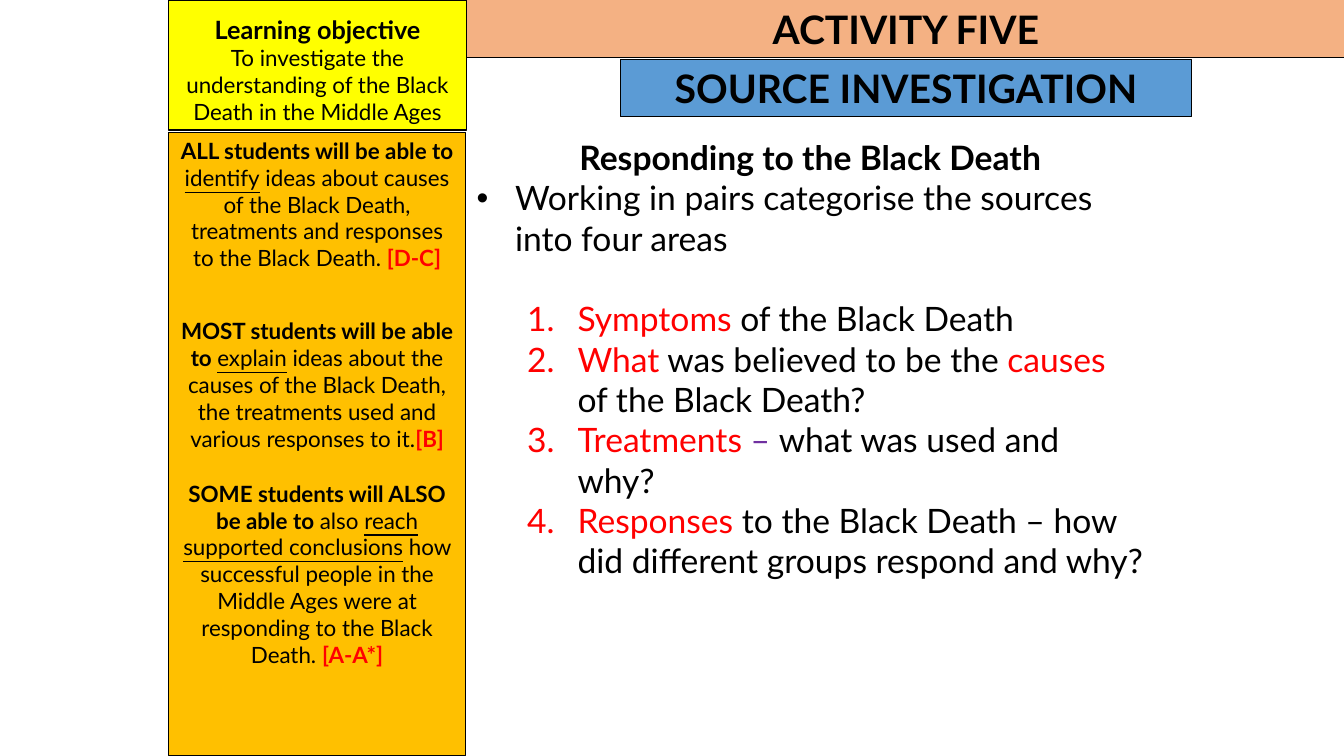
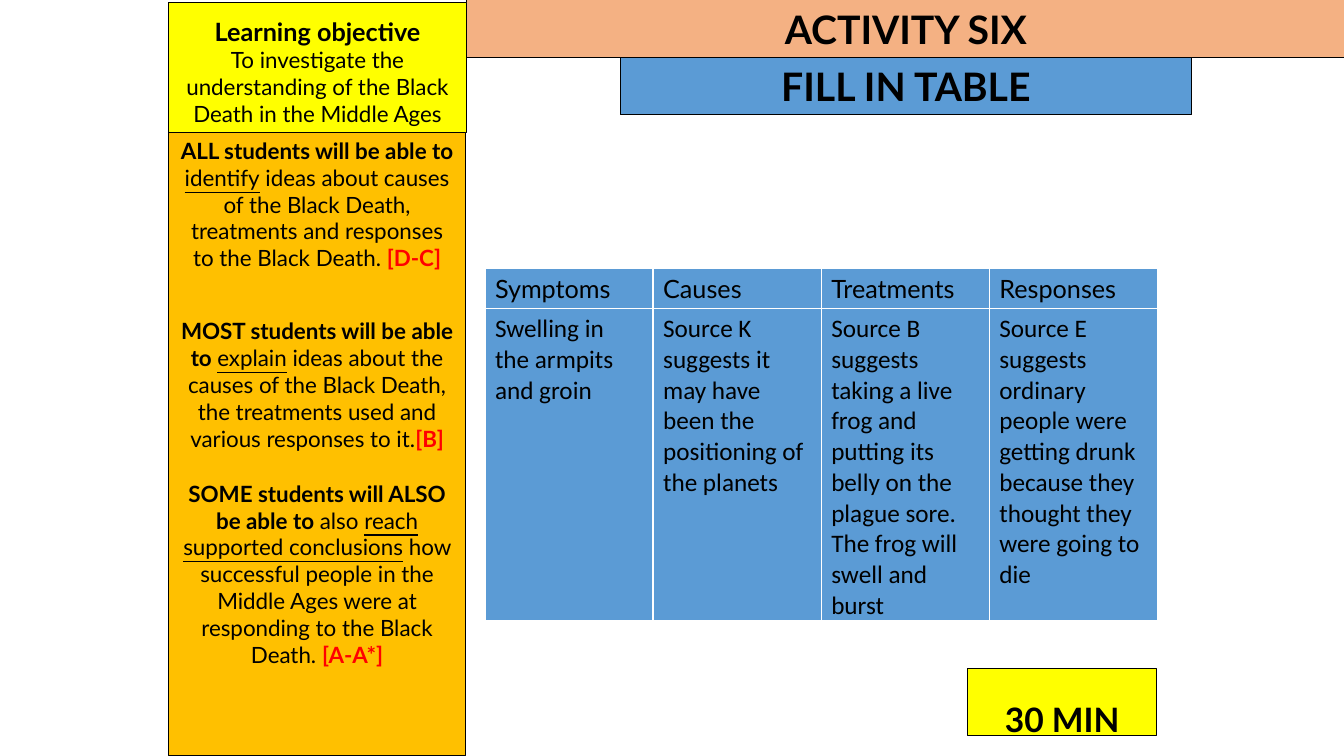
"""Build two lesson slides about the Black Death with a shared objectives sidebar."""
import lxml.etree
import pptx
import pptx.dml.color
import pptx.enum.shapes
import pptx.enum.text
import pptx.oxml.ns
import pptx.util

Inches = pptx.util.Inches
Pt = pptx.util.Pt
ANCHOR = pptx.enum.text.MSO_ANCHOR
ALIGN = pptx.enum.text.PP_ALIGN

FONT = "Lato"
BLACK, WHITE, RED, PURPLE = "000000", "FFFFFF", "FF0000", "7030A0"
YELLOW, AMBER, PEACH, BLUE = "FFFF00", "FFC000", "F4B183", "5B9BD5"
MARK_COLORS = {"r": RED, "p": PURPLE}

SIDEBAR_LEFT, SIDEBAR_TOP = 1.67, 1.31
CONTENT_LEFT = 4.63

OBJECTIVE = [
    {"runs": [("Learning objective", "b")], "size": 18},
    {"runs": [("To investigate the understanding of the Black Death in the Middle Ages", "")]},
]
OUTCOMES = [
    {"runs": [
        ("ALL students will be able to ", "b"),
        ("identify", "u"),
        (" ideas about causes of the Black Death, treatments and responses to the Black Death. ", ""),
        ("[D-C]", "br"),
    ]},
    {"before": 33, "runs": [
        ("MOST students will be able to ", "b"),
        ("explain", "u"),
        (" ideas about the causes of the Black Death, the treatments used and various responses to it.", ""),
        ("[B]", "br"),
    ]},
    {"before": 20, "runs": [
        ("SOME students will ALSO be able to", "b"),
        (" also ", ""),
        ("reach supported conclusions", "u"),
        (" how successful people in the Middle Ages were at responding to the Black Death. ", ""),
        ("[A-A*]", "br"),
    ]},
]
TASK = [
    {"runs": [("Responding to the Black Death", "b")], "align": ALIGN.CENTER},
    {"runs": [("Working in pairs categorise the sources into four areas", "")], "bullet": "dot"},
    {"runs": [("Symptoms ", "r"), ("of the Black Death", "")], "bullet": "number", "before": 28.8},
    {"runs": [("What", "r"), (" was believed to be the ", ""), ("causes ", "r"),
              ("of the Black Death?", "")], "bullet": "number"},
    {"runs": [("Treatments", "r"), (" – ", "p"), ("what was used and why?", "")], "bullet": "number"},
    {"runs": [("Responses ", "r"),
              ("to the Black Death – how did different groups respond and why?", "")], "bullet": "number"},
]
SOURCE_TABLE = [
    ["Symptoms", "Causes", "Treatments", "Responses"],
    ["Swelling in the armpits and groin",
     "Source K suggests it may have been the positioning of the planets",
     "Source B suggests taking a live frog and putting its belly on the plague sore. "
     "The frog will swell and burst",
     "Source E suggests ordinary people were getting drunk because they thought they were going to die"],
]


def color(hex_string):
    return pptx.dml.color.RGBColor.from_string(hex_string)


def add_xml(parent, tag, **attributes):
    element = lxml.etree.SubElement(parent, pptx.oxml.ns.qn(tag))
    for name, value in attributes.items():
        element.set(name, str(value))
    return element


def format_run(run, size, marks="", font=FONT):
    run.font.name = font
    run.font.size = Pt(size)
    run.font.bold = "b" in marks
    run.font.underline = "u" in marks
    hex_string = next((MARK_COLORS[mark] for mark in marks if mark in MARK_COLORS), BLACK)
    run.font.color.rgb = color(hex_string)


def add_bullet(paragraph, kind):
    properties = paragraph._p.get_or_add_pPr()
    margin, hanging = (0.38, 0.38) if kind == "dot" else (1, 0.5)
    properties.set("marL", str(Inches(margin)))
    properties.set("indent", str(-Inches(hanging)))
    if kind == "dot":
        add_xml(properties, "a:buFont", typeface="Arial")
        add_xml(properties, "a:buChar", char="•")
    else:
        paragraph.level = 1
        add_xml(properties, "a:buFont", typeface="+mj-lt")
        add_xml(properties, "a:buAutoNum", type="arabicPeriod")


def write_paragraphs(text_frame, paragraphs, size, align):
    text_frame.word_wrap = True
    for index, item in enumerate(paragraphs):
        paragraph = text_frame.add_paragraph() if index else text_frame.paragraphs[0]
        paragraph.alignment = item.get("align", align)
        paragraph.space_before = Pt(item.get("before", 0))
        if "bullet" in item:
            add_bullet(paragraph, item["bullet"])
        for text, marks in item["runs"]:
            run = paragraph.add_run()
            run.text = text
            format_run(run, item.get("size", size), marks)


def add_box(slide, position, fill, paragraphs, size, anchor=ANCHOR.TOP):
    shape = slide.shapes.add_shape(
        pptx.enum.shapes.MSO_SHAPE.RECTANGLE, *map(Inches, position))
    shape.shadow.inherit = False
    shape.fill.solid()
    shape.fill.fore_color.rgb = color(fill)
    shape.line.color.rgb = color(BLACK)
    shape.line.width = Pt(0.75)
    shape.text_frame.vertical_anchor = anchor
    write_paragraphs(shape.text_frame, paragraphs, size, ALIGN.CENTER)
    return shape


def add_heading(slide, position, fill, text):
    add_box(slide, position, fill, [{"runs": [(text, "b")]}], 28, ANCHOR.MIDDLE)


def add_lesson_slide(presentation, title, subtitle, objective_top, subtitle_top):
    slide = presentation.slides.add_slide(presentation.slide_layouts[6])
    add_heading(slide, (CONTENT_LEFT, 0, 8.71, 0.57), PEACH, title)
    add_box(slide, (SIDEBAR_LEFT, objective_top, 2.96, 1.29), YELLOW, OBJECTIVE, 16, ANCHOR.BOTTOM)
    add_box(slide, (SIDEBAR_LEFT, SIDEBAR_TOP, 2.95, 6.19), AMBER, OUTCOMES, 16)
    add_heading(slide, (6.15, subtitle_top, 5.67, 0.57), BLUE, subtitle)
    return slide


def add_task(slide):
    text_box = slide.shapes.add_textbox(*map(Inches, (CONTENT_LEFT, SIDEBAR_TOP, 6.81, 4.54)))
    write_paragraphs(text_box.text_frame, TASK, 24, ALIGN.LEFT)


def format_cell(cell, font):
    properties = cell._tc.get_or_add_tcPr()
    for side in ("a:lnL", "a:lnR", "a:lnT", "a:lnB"):
        border = add_xml(properties, side, w=Pt(1))
        add_xml(add_xml(border, "a:solidFill"), "a:srgbClr", val=WHITE)
    cell.fill.solid()
    cell.fill.fore_color.rgb = color(BLUE)
    for run in cell.text_frame.paragraphs[0].runs:
        format_run(run, 18, font=font)


def add_source_table(slide):
    row_heights = (0.4, 3.1)
    frame = slide.shapes.add_table(
        len(SOURCE_TABLE), len(SOURCE_TABLE[0]),
        *map(Inches, (4.81, 2.66, 6.67, sum(row_heights))))
    table = frame.table
    table.first_row = table.horz_banding = False
    for row_index, texts in enumerate(SOURCE_TABLE):
        table.rows[row_index].height = Inches(row_heights[row_index])
        for column_index, text in enumerate(texts):
            cell = table.cell(row_index, column_index)
            cell.text_frame.text = text
            format_cell(cell, "Calibri" if row_index else FONT)


def add_timer(slide, text):
    timer = add_box(slide, (9.6, 6.63, 1.87, 0.67), YELLOW, [{"runs": [(text, "b")]}], 24)
    timer.text_frame.margin_top = Inches(0.3)
    timer.text_frame.margin_bottom = 0


def main():
    presentation = pptx.Presentation()
    presentation.slide_width = Inches(13.33)
    presentation.slide_height = Inches(7.5)
    add_task(add_lesson_slide(presentation, "ACTIVITY FIVE", "SOURCE INVESTIGATION", 0, 0.59))
    table_slide = add_lesson_slide(presentation, "ACTIVITY SIX", "FILL IN TABLE", 0.02, 0.57)
    add_source_table(table_slide)
    add_timer(table_slide, "30 MIN")
    presentation.save("out.pptx")


if __name__ == "__main__":
    main()
